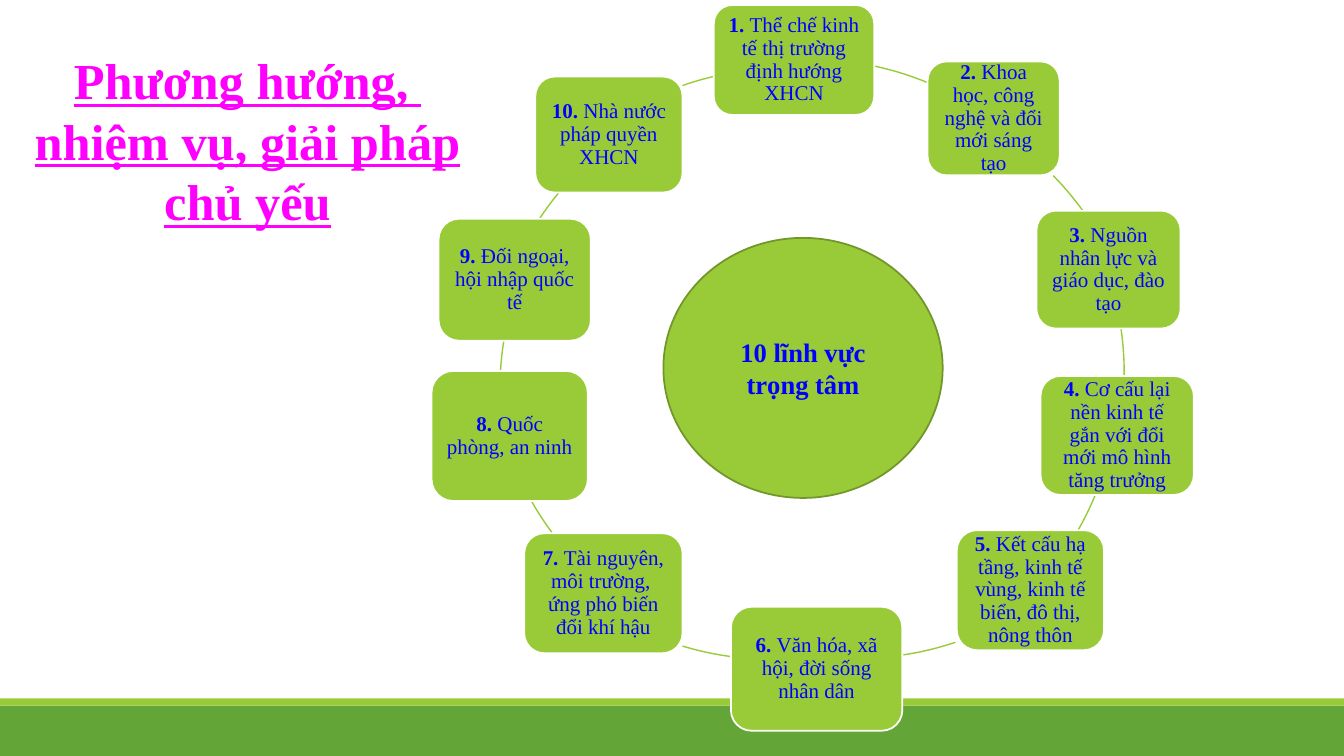
import math
from pptx import Presentation
from pptx import util as u
from pptx.dml import color
from pptx.enum import shapes, text

GREEN, DARK_GREEN, OLIVE = "99CB38", "63A537", "719629"
WHITE, BLUE, MAGENTA = "FFFFFF", "0000FF", "FF00FF"
RING_SIZE = 6.03


def rgb(value):
    return color.RGBColor.from_string(value)


def write(paragraph, content, size=15, ink=BLUE, bold=False, underline=False):
    paragraph.alignment = text.PP_ALIGN.CENTER
    for index, line in enumerate(content.split("\n")):
        if index:
            paragraph.add_line_break()
        run = paragraph.add_run()
        run.text = line
        font = run.font
        font.name, font.size = "Times New Roman", u.Pt(size)
        font.bold, font.underline = bold, underline
        font.color.rgb = rgb(ink)


presentation = Presentation()
presentation.slide_width = u.Inches(13.33)
presentation.slide_height = u.Inches(7.5)
slide = presentation.slides.add_slide(presentation.slide_layouts[5])

title = slide.shapes.title
title.left, title.top = u.Inches(0.24), u.Inches(0.44)
title.width, title.height = u.Inches(4.43), u.Inches(1.92)
title_frame = title.text_frame
title_frame.word_wrap = True
title_frame.auto_size = text.MSO_AUTO_SIZE.NONE
title_frame.vertical_anchor = text.MSO_ANCHOR.TOP
title_lines = ["Phương hướng, ", "nhiệm vụ, giải pháp chủ yếu"]
for paragraph, line in zip([title_frame.paragraphs[0], title_frame.add_paragraph()], title_lines):
    write(paragraph, line, size=36, ink=MAGENTA, bold=True, underline=True)

for top, height, fill in [(7, 0.5, DARK_GREEN), (6.93, 0.07, GREEN)]:
    band = slide.shapes.add_shape(
        shapes.MSO_SHAPE.RECTANGLE, 0, u.Inches(top), u.Inches(13.33), u.Inches(height))
    band.shadow.inherit = False
    band.fill.solid()
    band.fill.fore_color.rgb = rgb(fill)
    band.line.fill.background()

arcs = [
    (5.03, 0.59, (8.68, 0.65), (9.2, 0.81)),
    (5.28, 0.84, (10.45, 1.74), (10.74, 2.09)),
    (5.12, 0.68, (11.13, 3.26), (11.16, 3.72)),
    (5.06, 0.75, (10.87, 4.91), (10.7, 5.26)),
    (5.5, 0.5, (9.48, 6.38), (8.96, 6.5)),
    (4.63, 0.51, (7.25, 6.52), (6.77, 6.41)),
    (4.88, 0.47, (5.48, 5.28), (5.28, 4.98)),
    (4.96, 0.84, (4.97, 3.68), (5, 3.38)),
    (4.85, 0.82, (5.35, 2.17), (5.54, 1.92)),
    (4.75, 0.68, (6.77, 0.85), (7.08, 0.76)),
]
for left, top, *ends in arcs:
    arc = slide.shapes.add_shape(
        shapes.MSO_SHAPE.ARC, u.Inches(left), u.Inches(top), u.Inches(RING_SIZE), u.Inches(RING_SIZE))
    arc.shadow.inherit = False
    arc.fill.background()
    arc.line.color.rgb = rgb(GREEN)
    arc.line.width = u.Pt(1)
    for index, (x, y) in enumerate(ends):
        angle = math.atan2(y - top - RING_SIZE / 2, x - left - RING_SIZE / 2)
        arc.adjustments[index] = math.degrees(angle) % 360 * 0.6

fields = [
    (7.08, 0.05, 1.59, 1.09, "Thể chế kinh tế thị trường định hướng XHCN"),
    (9.2, 0.61, 1.31, 1.13, "Khoa học, công nghệ và đổi mới sáng tạo"),
    (10.28, 2.09, 1.43, 1.17, "Nguồn nhân lực và giáo dục, đào tạo"),
    (10.32, 3.73, 1.52, 1.18, "Cơ cấu lại nền kinh tế gắn với đổi mới mô hình tăng trưởng"),
    (9.49, 5.26, 1.46, 1.19, "Kết cấu hạ tầng, kinh tế vùng, kinh tế biển, đô thị, nông thôn"),
    (7.25, 6.02, 1.7, 1.23, "Văn hóa, xã hội, đời sống nhân dân"),
    (5.2, 5.29, 1.57, 1.19, "Tài nguyên, môi trường, \nứng phó biến đổi khí hậu"),
    (4.28, 3.68, 1.55, 1.29, "Quốc phòng, an ninh"),
    (4.35, 2.17, 1.51, 1.21, "Đối ngoại, hội nhập quốc tế"),
    (5.31, 0.76, 1.46, 1.15, "Nhà nước pháp quyền XHCN"),
]
for number, (left, top, width, height, label) in enumerate(fields, 1):
    box = slide.shapes.add_shape(
        shapes.MSO_SHAPE.ROUNDED_RECTANGLE,
        u.Inches(left), u.Inches(top), u.Inches(width), u.Inches(height))
    box.shadow.inherit = False
    box.fill.solid()
    box.fill.fore_color.rgb = rgb(GREEN)
    box.line.color.rgb = rgb(WHITE)
    box.line.width = u.Pt(1.25)
    frame = box.text_frame
    frame.word_wrap = True
    frame.vertical_anchor = text.MSO_ANCHOR.MIDDLE
    frame.margin_left = frame.margin_right = u.Inches(0.08)
    frame.margin_top = frame.margin_bottom = u.Inches(0.08)
    paragraph = frame.paragraphs[0]
    paragraph.line_spacing = 0.9
    write(paragraph, f"{number}. ", bold=True)
    write(paragraph, label)

center = slide.shapes.add_shape(
    shapes.MSO_SHAPE.OVAL, u.Inches(6.58), u.Inches(2.36), u.Inches(2.77), u.Inches(2.58))
center.shadow.inherit = False
center.fill.solid()
center.fill.fore_color.rgb = rgb(GREEN)
center.line.color.rgb = rgb(OLIVE)
center.line.width = u.Pt(1.25)
center.text_frame.word_wrap = True
center.text_frame.vertical_anchor = text.MSO_ANCHOR.MIDDLE
write(center.text_frame.paragraphs[0], "10 lĩnh vực trọng tâm", size=19, bold=True)

presentation.save("out.pptx")
